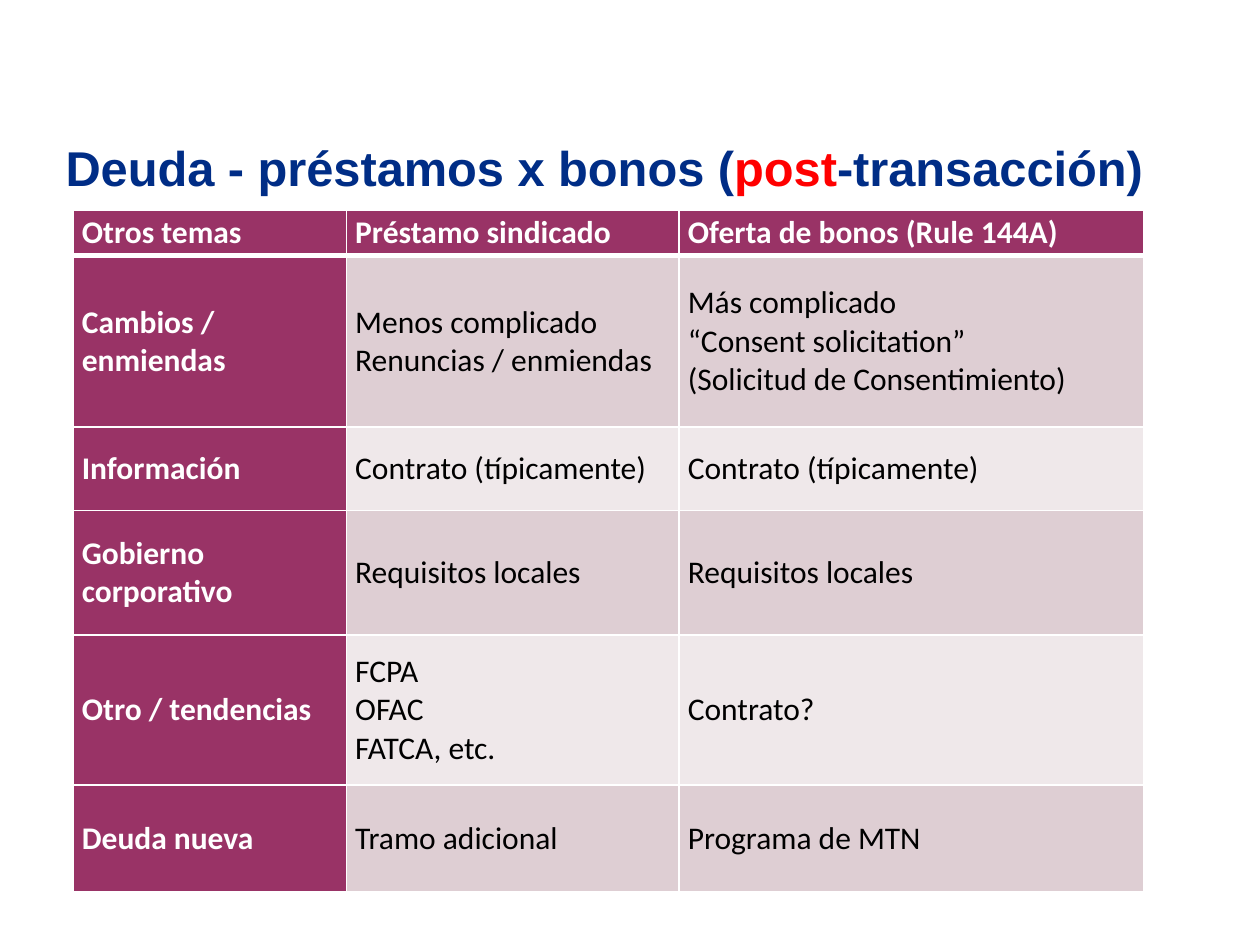
from lxml import etree
from pptx import Presentation
from pptx.dml.color import RGBColor
from pptx.enum.text import MSO_ANCHOR, MSO_AUTO_SIZE, PP_ALIGN
from pptx.oxml.ns import qn
from pptx.util import Inches, Pt

MIDDLE, TOP = MSO_ANCHOR.MIDDLE, MSO_ANCHOR.TOP
LEFT = PP_ALIGN.LEFT
NO_FIT = MSO_AUTO_SIZE.NONE

NAVY = RGBColor(0x00, 0x2D, 0x86)
RED = RGBColor(0xFF, 0x00, 0x00)
PLUM = RGBColor(0x99, 0x33, 0x66)
ROSE = RGBColor(0xDE, 0xCE, 0xD3)
PALE = RGBColor(0xEF, 0xE8, 0xEA)
WHITE = RGBColor(0xFF, 0xFF, 0xFF)
BLACK = RGBColor(0x00, 0x00, 0x00)

SLIDE_W, SLIDE_H = Inches(10), Inches(7.5)
TITLE_BOX = (Inches(0.42), Inches(1), Inches(9.33), Inches(1))
TABLE_BOX = (Inches(0.58), Inches(1.67), Inches(8.5), Inches(5.41))
COLUMN_SHARES = (2.17, 2.64, 3.69)
ROW_SHARES = (0.36, 1.36, 0.66, 0.99, 1.19, 0.85)

TITLE = (("Deuda - préstamos x bonos (", NAVY), ("post", RED), ("-transacción)", NAVY))
ROWS = (
    ("Otros temas", "Préstamo sindicado", "Oferta de bonos (Rule 144A)"),
    ("Cambios / enmiendas", "Menos complicado\nRenuncias / enmiendas",
     "Más complicado\n“Consent solicitation”\n(Solicitud de Consentimiento)"),
    ("Información", "Contrato (típicamente)", "Contrato (típicamente)"),
    ("Gobierno corporativo", "Requisitos locales", "Requisitos locales"),
    ("Otro / tendencias", "FCPA\nOFAC\nFATCA, etc.", "Contrato?"),
    ("Deuda nueva", "Tramo adicional", "Programa de MTN"),
)


def set_attrs(target, values):
    for name, value in values.items():
        setattr(target, name, value)


def set_font(font, color, **values):
    set_attrs(font, values)
    font.color.rgb = color


def set_borders(cell, widths):
    tcPr = cell._tc.get_or_add_tcPr()
    for side, width in zip("LRTB", widths):
        ln = etree.SubElement(tcPr, qn(f"a:ln{side}"), w=str(Pt(width)))
        fill = etree.SubElement(ln, qn("a:solidFill"))
        etree.SubElement(fill, qn("a:srgbClr"), val=str(WHITE))


def add_title(s, box):
    sp = s.shapes.title
    set_attrs(sp, dict(zip(("left", "top", "width", "height"), box)))
    tf = sp.text_frame
    set_attrs(tf, {"word_wrap": True, "auto_size": NO_FIT,
                   "vertical_anchor": TOP, "margin_top": Inches(0.09)})
    p = tf.paragraphs[0]
    p.alignment = LEFT
    for text, color in TITLE:
        r = p.add_run()
        r.text = text
        set_font(r.font, color, name="Arial", size=Pt(27.9), bold=True)


def format_cell(cell, text, row, col):
    heading = row == 0 or col == 0
    set_attrs(cell, {"text": text, "vertical_anchor": MIDDLE,
                     "margin_left": Inches(0.07), "margin_right": Inches(0.07),
                     "margin_top": 0, "margin_bottom": 0})
    set_borders(cell, (1, 1, 3 if row == 1 else 1, 3 if row == 0 else 1))
    cell.fill.solid()
    cell.fill.fore_color.rgb = PLUM if heading else ROSE if row % 2 else PALE
    for p in cell.text_frame.paragraphs:
        p.alignment = LEFT
        set_font(p.font, WHITE if heading else BLACK,
                 name="Calibri", size=Pt(18), bold=heading)


def add_comparison(s, box):
    table = s.shapes.add_table(len(ROWS), len(COLUMN_SHARES), *box).table
    for column, share in zip(table.columns, COLUMN_SHARES):
        column.width = int(box[2] * share / sum(COLUMN_SHARES))
    for row, share in zip(table.rows, ROW_SHARES):
        row.height = int(box[3] * share / sum(ROW_SHARES))
    for i, texts in enumerate(ROWS):
        for j, text in enumerate(texts):
            format_cell(table.cell(i, j), text, i, j)


def main():
    prs = Presentation()
    set_attrs(prs, {"slide_width": SLIDE_W, "slide_height": SLIDE_H})
    s = prs.slides.add_slide(prs.slide_layouts.get_by_name("Title Only"))
    add_title(s, TITLE_BOX)
    add_comparison(s, TABLE_BOX)
    prs.save("out.pptx")


if __name__ == "__main__":
    main()
